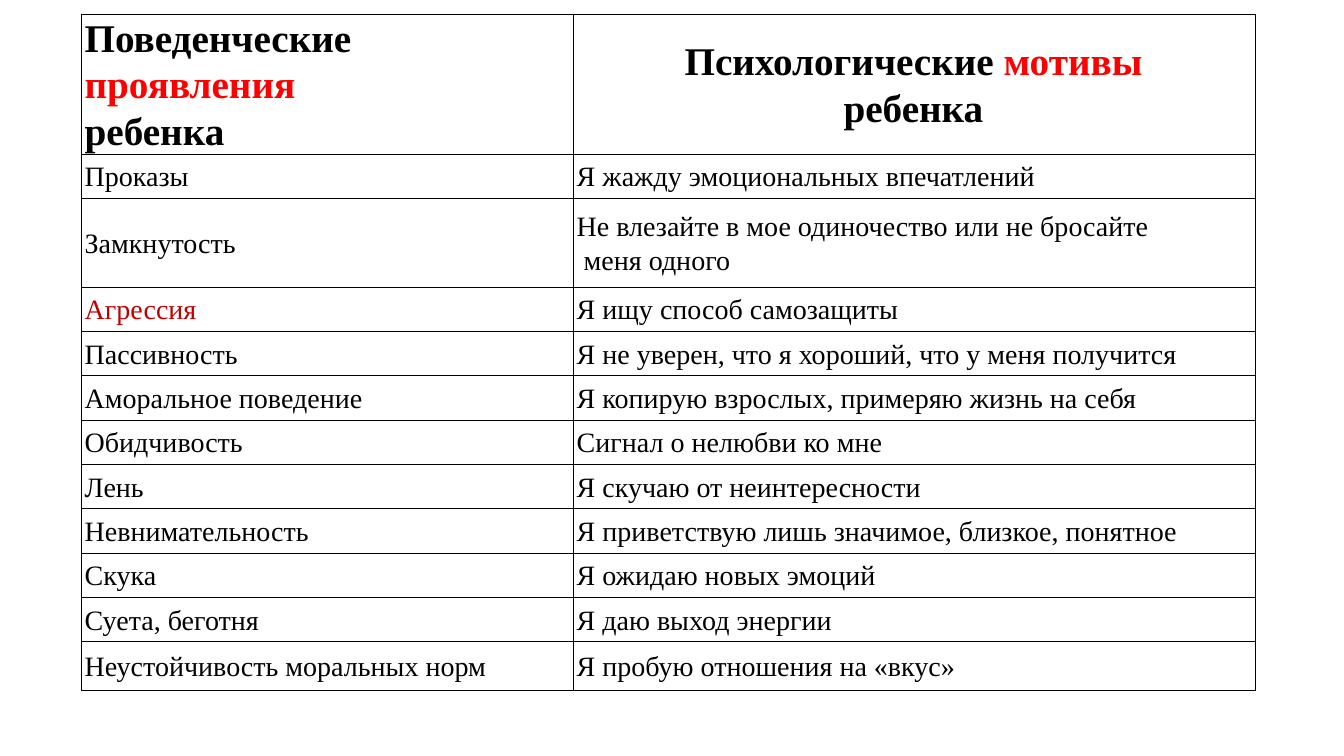
from pptx import Presentation
from pptx.dml.color import RGBColor
from pptx.enum.text import MSO_ANCHOR, PP_ALIGN
from pptx.oxml import parse_xml
from pptx.oxml.ns import nsdecls
from pptx.util import Inches, Pt

COLORS = {"text": "000000", "accent": "FF0000", "warning": "C00000"}
FONT = "Times New Roman"
COLUMN_WIDTHS = (4.88, 6.76)
HEADER_HEIGHT, ROW_HEIGHT, LAST_HEIGHT = 1.39, 0.44, 0.48

# A cell is a list of paragraphs, a paragraph a list of (text, color) runs.
HEADERS = (
    [[("Поведенческие ", "text"), ("проявления", "accent")], [("ребенка", "text")]],
    [[("Психологические ", "text"), ("мотивы", "accent")], [("ребенка", "text")]],
)
BEHAVIOURS = (
    ("Проказы", "Я жажду эмоциональных впечатлений"),
    ("Замкнутость", "Не влезайте в мое одиночество или не бросайте\n меня одного"),
    ("Агрессия", "Я ищу способ самозащиты"),
    ("Пассивность", "Я не уверен, что я хороший, что у меня получится"),
    ("Аморальное поведение", "Я копирую взрослых, примеряю жизнь на себя"),
    ("Обидчивость", "Сигнал о нелюбви ко мне"),
    ("Лень", "Я скучаю от неинтересности"),
    ("Невнимательность", "Я приветствую лишь значимое, близкое, понятное"),
    ("Скука", "Я ожидаю новых эмоций"),
    ("Суета, беготня", "Я даю выход энергии"),
    ("Неустойчивость моральных норм", "Я пробую отношения на «вкус»"),
)


def plain_cell(text):
    """Turn the lines of a text into one-run paragraphs."""
    color = "warning" if text == "Агрессия" else "text"
    return [[(line, color)] for line in text.split("\n")]


def add_borders(cell):
    properties = cell._tc.get_or_add_tcPr()
    for position, side in enumerate(("lnL", "lnR", "lnT", "lnB")):
        properties.insert(position, parse_xml(
            f'<a:{side} {nsdecls("a")} w="12700"><a:solidFill>'
            f'<a:srgbClr val="{COLORS["text"]}"/></a:solidFill></a:{side}>'))


def fill_cell(cell, paragraphs, size, bold, alignment):
    cell.fill.background()
    add_borders(cell)
    cell.vertical_anchor = MSO_ANCHOR.MIDDLE
    cell.margin_left, cell.margin_right = Inches(0.03), Inches(0.05)
    cell.margin_top = cell.margin_bottom = 0
    for index, runs in enumerate(paragraphs):
        frame = cell.text_frame
        paragraph = frame.add_paragraph() if index else frame.paragraphs[0]
        paragraph.alignment = alignment
        paragraph.line_spacing = 1.07
        for text, color in runs:
            run = paragraph.add_run()
            run.text = text
            run.font.name = FONT
            run.font.size = Pt(size)
            run.font.bold = bold
            run.font.color.rgb = RGBColor.from_string(COLORS[color])


def add_motives_table(slide, left, top, width):
    rows = [HEADERS] + [[plain_cell(text) for text in pair] for pair in BEHAVIOURS]
    heights = [HEADER_HEIGHT]
    heights += [ROW_HEIGHT * len(motive) for _, motive in rows[1:-1]]
    heights.append(LAST_HEIGHT)
    table = slide.shapes.add_table(
        len(rows), len(COLUMN_WIDTHS), Inches(left), Inches(top),
        Inches(width), Inches(sum(heights))).table
    table.horz_banding = False
    for column, share in zip(table.columns, COLUMN_WIDTHS):
        column.width = Inches(width * share / sum(COLUMN_WIDTHS))
    for row_index, (row, height) in enumerate(zip(rows, heights)):
        table.rows[row_index].height = Inches(height)
        header = row_index == 0
        for column_index, paragraphs in enumerate(row):
            centred = header and column_index == 1
            fill_cell(table.cell(row_index, column_index), paragraphs,
                      28 if header else 20, header,
                      PP_ALIGN.CENTER if centred else PP_ALIGN.LEFT)


def main():
    presentation = Presentation()
    presentation.slide_width = Inches(13.33)
    presentation.slide_height = Inches(7.5)
    slide = presentation.slides.add_slide(presentation.slide_layouts[6])
    add_motives_table(slide, 0.81, 0.14, sum(COLUMN_WIDTHS))
    presentation.save("out.pptx")


if __name__ == "__main__":
    main()
